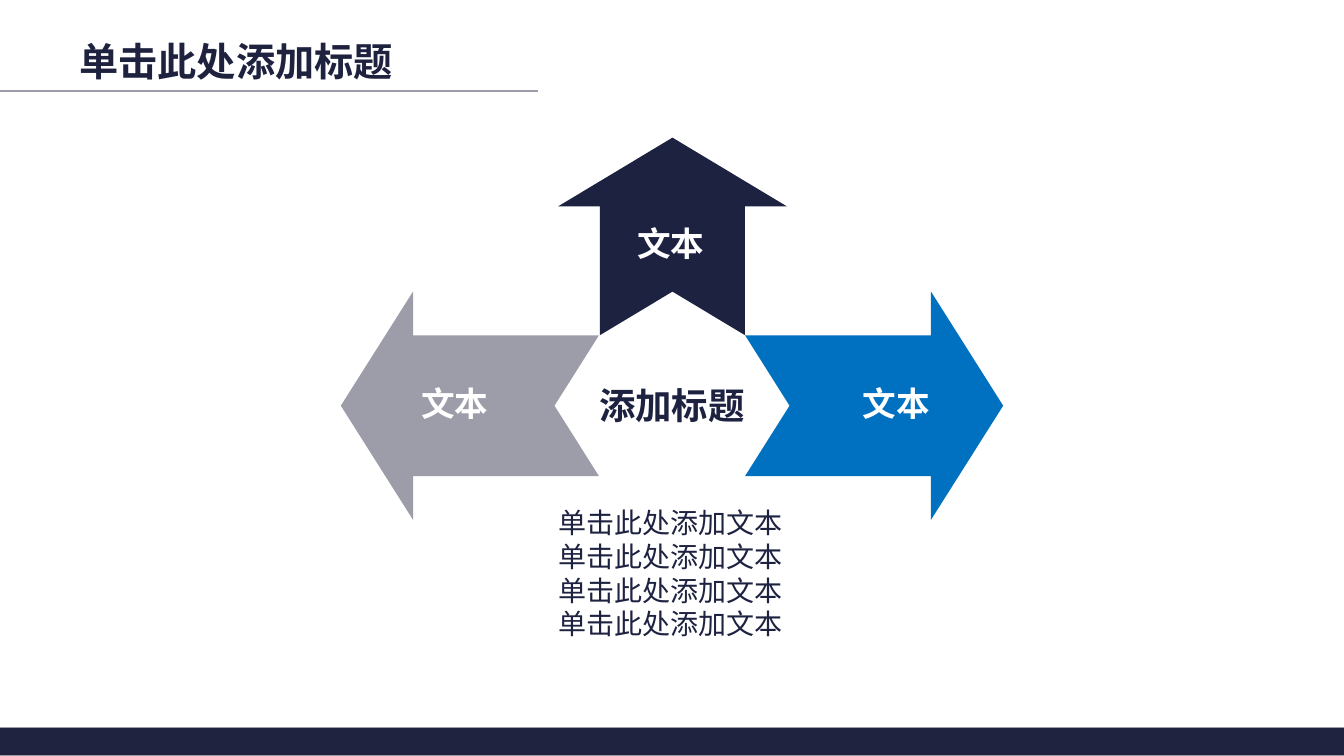
from lxml.etree import SubElement
from pptx import Presentation
from pptx.dml.color import RGBColor
from pptx.enum.shapes import MSO_CONNECTOR, MSO_SHAPE
from pptx.enum.text import MSO_AUTO_SIZE, PP_ALIGN
from pptx.oxml.ns import qn
from pptx.util import Inches, Pt

FONT = "Calibri"
COLORS = {
    "title": "1E223F",
    "navy": "1E2241",
    "footer": "1F2340",
    "gray": "9D9DA9",
    "blue": "0070C0",
    "white": "FFFFFF",
}


def rgb(color):
    return RGBColor.from_string(COLORS[color])


def add_filled(slide, preset, box, fill):
    shape = slide.shapes.add_shape(preset, *map(Inches, box))
    shape.shadow.inherit = False
    shape.fill.solid()
    shape.fill.fore_color.rgb = rgb(fill)
    shape.line.fill.background()
    return shape


def add_footer(slide):
    footer = add_filled(slide, MSO_SHAPE.RECTANGLE, (-0.03, 7.22, 13.37, 0.28), "footer")
    footer.line.color.rgb = rgb("gray")
    footer.line.width = Pt(0.75)


def add_title_rule(slide):
    rule = slide.shapes.add_connector(
        MSO_CONNECTOR.STRAIGHT, Inches(0), Inches(0.9), Inches(5.34), Inches(0.9)
    )
    rule.line.color.rgb = rgb("gray")
    rule.line.width = Pt(1.5)
    SubElement(rule._element.spPr, qn("a:effectLst"))


def add_arrow(slide, box, fill, rotation, shaft, head):
    arrow = add_filled(slide, MSO_SHAPE.NOTCHED_RIGHT_ARROW, box, fill)
    arrow.rotation = rotation
    arrow.adjustments[0] = shaft
    arrow.adjustments[1] = head


def add_text(slide, text, box, size, color, bold=True, align=PP_ALIGN.LEFT):
    frame = slide.shapes.add_textbox(*map(Inches, box)).text_frame
    frame.word_wrap = True
    frame.auto_size = MSO_AUTO_SIZE.SHAPE_TO_FIT_TEXT
    frame.text = text
    for paragraph in frame.paragraphs:
        paragraph.alignment = align
        for run in paragraph.runs:
            run.font.name = FONT
            run.font.size = Pt(size)
            run.font.bold = bold
            run.font.color.rgb = rgb(color)


def main():
    prs = Presentation()
    prs.slide_width, prs.slide_height = Inches(13.33), Inches(7.5)
    slide = prs.slides.add_slide(prs.slide_layouts[6])

    add_footer(slide)
    add_title_rule(slide)
    add_text(slide, "单击此处添加标题", (0.69, 0.32, 4.22, 0.57), 28, "title")

    directions = [
        ((3.38, 2.89, 2.56, 2.27), "gray", 180, 0.615, 0.316, (4.08, 3.75), PP_ALIGN.LEFT),
        ((7.39, 2.89, 2.56, 2.27), "blue", 0, 0.615, 0.316, (8.46, 3.75), PP_ALIGN.LEFT),
        ((5.69, 1.21, 1.96, 2.27), "navy", 270, 0.634, 0.348, (6.03, 2.16), PP_ALIGN.CENTER),
    ]
    for box, fill, rotation, shaft, head, label_at, align in directions:
        add_arrow(slide, box, fill, rotation, shaft, head)
        add_text(slide, "文本", (*label_at, 1.25, 0.5), 24, "white", align=align)

    add_text(slide, "添加标题", (5.73, 3.75, 1.87, 0.53), 26, "navy", align=PP_ALIGN.CENTER)
    details = "\n".join(["单击此处添加文本"] * 4)
    add_text(slide, details, (5.07, 4.97, 3.16, 1.43), 20, "navy", False, PP_ALIGN.CENTER)

    prs.save("out.pptx")


if __name__ == "__main__":
    main()
